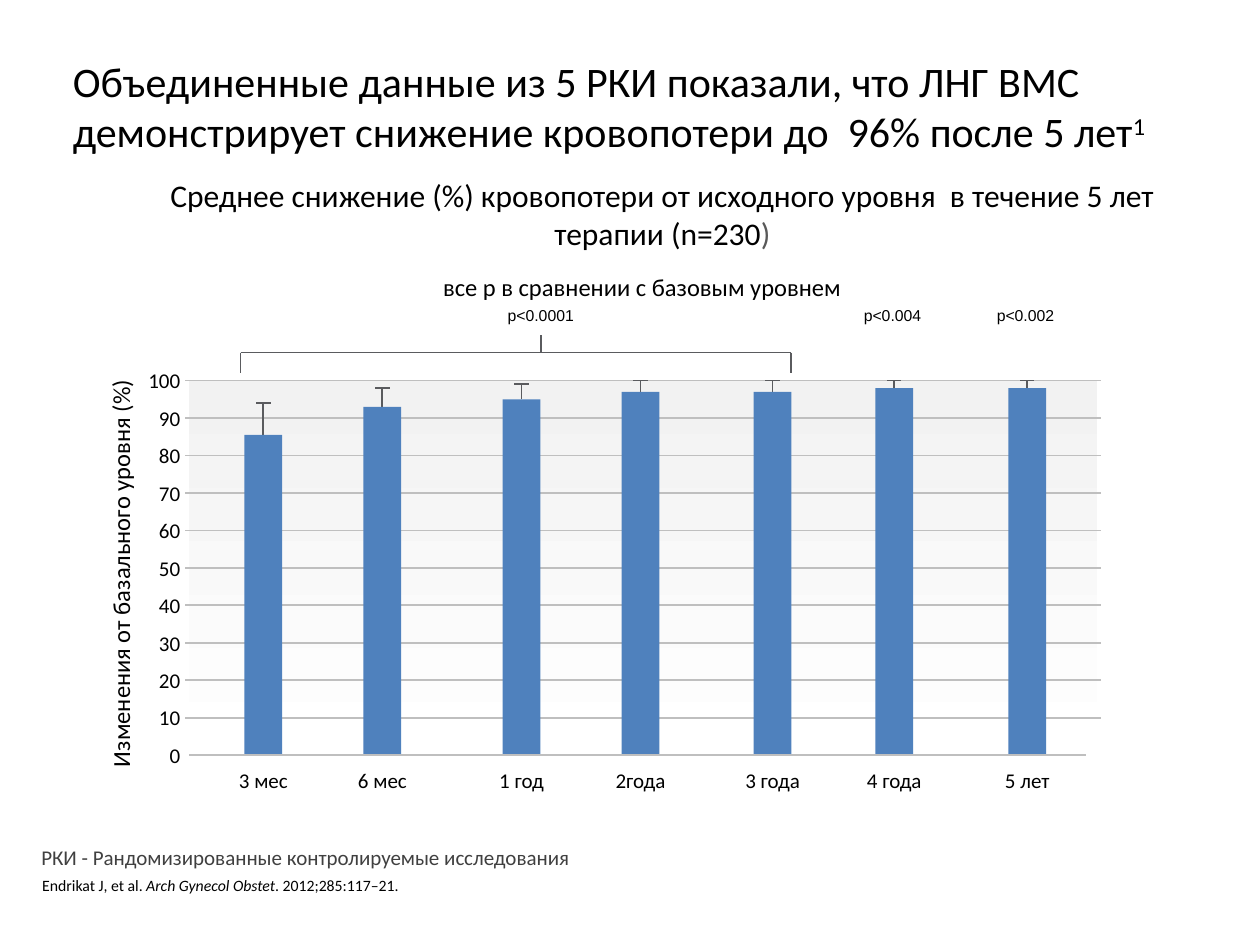
from lxml.etree import SubElement
from pptx import Presentation
from pptx.dml.color import RGBColor
from pptx.enum.shapes import MSO_CONNECTOR as Connector, MSO_SHAPE as Shape
from pptx.enum.text import MSO_ANCHOR as Anchor, MSO_AUTO_SIZE as AutoSize, PP_ALIGN as Align
from pptx.oxml.ns import qn
from pptx.util import Pt

BLACK = RGBColor(0x00, 0x00, 0x00)
WHITE = RGBColor(0xFF, 0xFF, 0xFF)
PALE = RGBColor(0xF2, 0xF2, 0xF2)
GRID = RGBColor(0xBF, 0xBF, 0xBF)
INK = RGBColor(0x5A, 0x5B, 0x5E)
BLUE = RGBColor(0x4F, 0x81, 0xBD)
GREY = RGBColor(0x59, 0x59, 0x59)
NOTE = RGBColor(0x40, 0x40, 0x40)

BAR_WIDTH, CAP_WIDTH = 21.6, 8.2
PERIODS = [
    ("3 мес", 150.5, 85.5, 94),
    ("6 мес", 218.5, 93, 98),
    ("1 год", 298, 95, 99),
    ("2года", 366, 97, 100),
    ("3 года", 441.5, 97, 100),
    ("4 года", 511, 98, 100),
    ("5 лет", 587, 98, 100),
]


def format_span(span, size, color=BLACK, font="Calibri"):
    span.font.size = Pt(size)
    span.font.name = font
    span.font.color.rgb = color


def add_text(page, box, text, size, align=Align.CENTER, color=BLACK,
             font="Calibri", margins=(0, 0), wrap=True):
    label = page.shapes.add_textbox(*map(Pt, box))
    frame = label.text_frame
    frame.word_wrap = wrap
    frame.margin_left = frame.margin_right = Pt(margins[0])
    frame.margin_top = frame.margin_bottom = Pt(margins[1])
    frame.text = text
    para = frame.paragraphs[0]
    para.alignment = align
    format_span(para.runs[0], size, color, font)
    return label


def add_line(page, x1, y1, x2, y2, color):
    line = page.shapes.add_connector(Connector.STRAIGHT, Pt(x1), Pt(y1), Pt(x2), Pt(y2))
    line.line.color.rgb = color
    line.line.width = Pt(1)
    SubElement(line._element.spPr, qn("a:effectLst"))


def add_rectangle(page, box):
    rectangle = page.shapes.add_shape(Shape.RECTANGLE, *map(Pt, box))
    rectangle.shadow.inherit = False
    rectangle.line.fill.background()
    return rectangle


def place_title(page, box):
    title = page.shapes.title
    title.left, title.top, title.width, title.height = map(Pt, box)
    frame = title.text_frame
    frame.auto_size = AutoSize.NONE
    frame.vertical_anchor = Anchor.MIDDLE
    frame.text = ("Объединенные данные из 5 РКИ показали, что ЛНГ ВМС "
                  "демонстрирует снижение кровопотери до  96% после 5 лет")
    para = frame.paragraphs[0]
    para.alignment = Align.LEFT
    mark = para.add_run()
    mark.text = "1"
    for span in para.runs:
        format_span(span, 24)
    mark.font._element.set("baseline", "30000")


def place_subtitle(page, box):
    subtitle = add_text(page, box, "Среднее снижение (%) кровопотери от исходного уровня  "
                        "в течение 5 лет терапии (n=230", 18, margins=(7.2, 3.6))
    bracket = subtitle.text_frame.paragraphs[0].add_run()
    bracket.text = ")"
    format_span(bracket, 18, GREY)


def place_plot(page, box):
    left, top, width, height = box
    bottom = top + height

    def level(value):
        return bottom - height * value / 100

    backdrop = add_rectangle(page, box)
    backdrop.fill.gradient()
    backdrop.fill.gradient_angle = 90
    for stop, color in zip(backdrop.fill.gradient_stops, (WHITE, PALE)):
        stop.color.rgb = color

    for value in range(0, 101, 10):
        y = level(value)
        add_text(page, (left - 53, y - 7.2, 48, 14.4), str(value), 12, Align.RIGHT)
        if value:
            add_line(page, left - 2, y, left + width + 2, y, GRID)

    for period, center, value, peak in PERIODS:
        add_line(page, center, level(value), center, level(peak), INK)
        add_line(page, center - CAP_WIDTH / 2, level(peak),
                 center + CAP_WIDTH / 2, level(peak), INK)
        bar = add_rectangle(page, (center - BAR_WIDTH / 2, level(value),
                                   BAR_WIDTH, bottom - level(value)))
        bar.fill.solid()
        bar.fill.fore_color.rgb = BLUE
        add_text(page, (center - 45, bottom + 7.2, 90, 14.4), period, 12)
    add_line(page, left, bottom, left + width - 6.5, bottom, GRID)

    axis_title = add_text(page, (left - 164, top + 101.5, 250, 17.3),
                          "Изменения от базального уровня (%)", 14)
    axis_title.rotation = 270


def place_significance(page, box):
    left, top, width, height = box
    add_text(page, (left, top, width, 17.3), "все p в сравнении с базовым уровнем", 14)
    for text, center in (("p<0.0001", 309), ("p<0.004", 510), ("p<0.002", 586)):
        add_text(page, (center - 35, top + 19.5, 70, 10.8), text, 9, font="Arial")
    start, middle, end = 137.5, 309, 452
    bottom = top + height
    beam = bottom - 11.5
    add_line(page, start, beam, end, beam, INK)
    add_line(page, middle, beam - 10, middle, beam, INK)
    for x in (start, end):
        add_line(page, x, beam, x, bottom, INK)


def place_footnotes(page, box):
    left, top, width, height = box
    add_text(page, (left + 1.5, top, 320, 21.6),
             "РКИ - Рандомизированные контролируемые исследования", 12, Align.LEFT,
             NOTE, margins=(7.2, 3.6), wrap=False)
    citation = add_text(page, (left, top + 18, width, height - 18), " Endrikat J, et al. ",
                        9, Align.LEFT, margins=(7.2, 3.6))
    para = citation.text_frame.paragraphs[0]
    for text, italic in (("Arch Gynecol Obstet", True), (".\u00a02012;285:117–21.", False)):
        span = para.add_run()
        span.text = text
        format_span(span, 9)
        span.font.italic = italic


def main():
    deck = Presentation()
    deck.slide_width, deck.slide_height = Pt(720), Pt(540)
    page = deck.slides.add_slide(deck.slide_layouts[5])
    place_title(page, (34.5, 26, 684, 69))
    place_subtitle(page, (72, 97, 613, 58.5))
    place_plot(page, (108, 217.5, 519, 214))
    place_significance(page, (102, 155.5, 530, 57.5))
    place_footnotes(page, (15, 479, 456, 53))
    deck.save("out.pptx")


if __name__ == "__main__":
    main()
